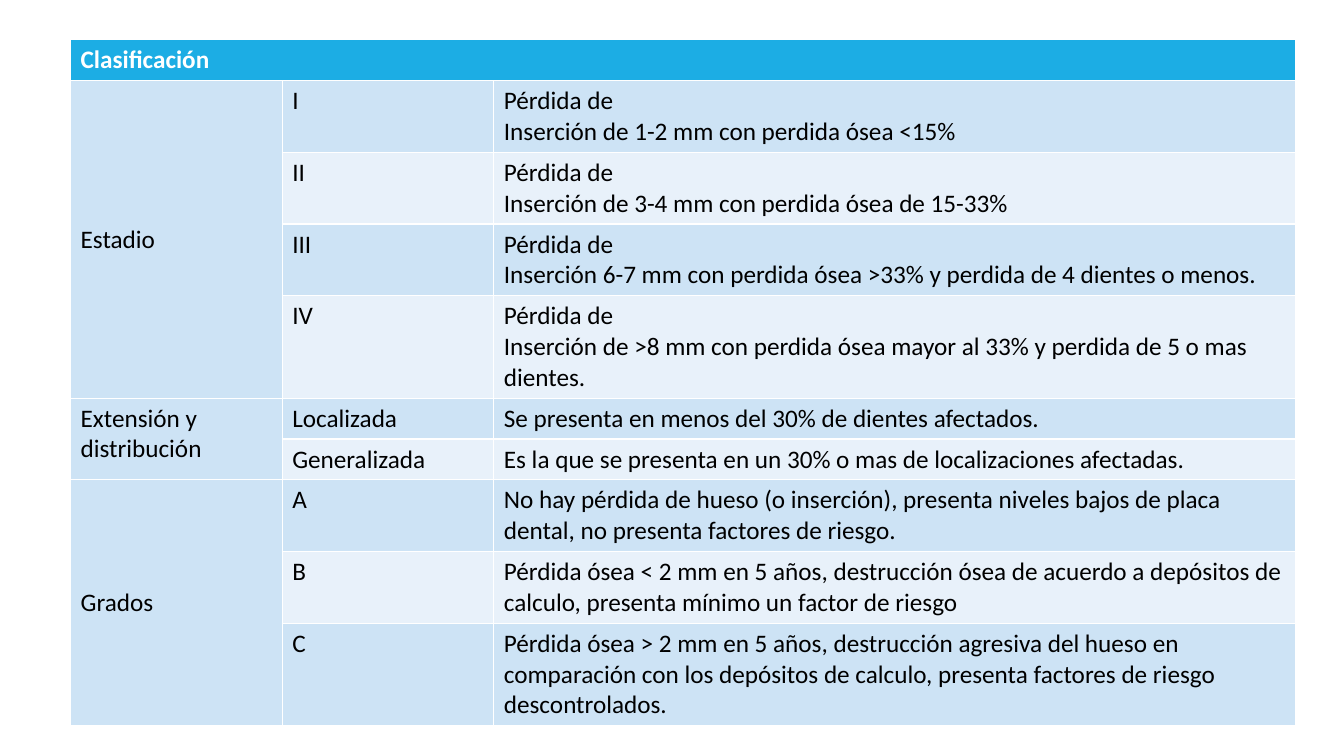
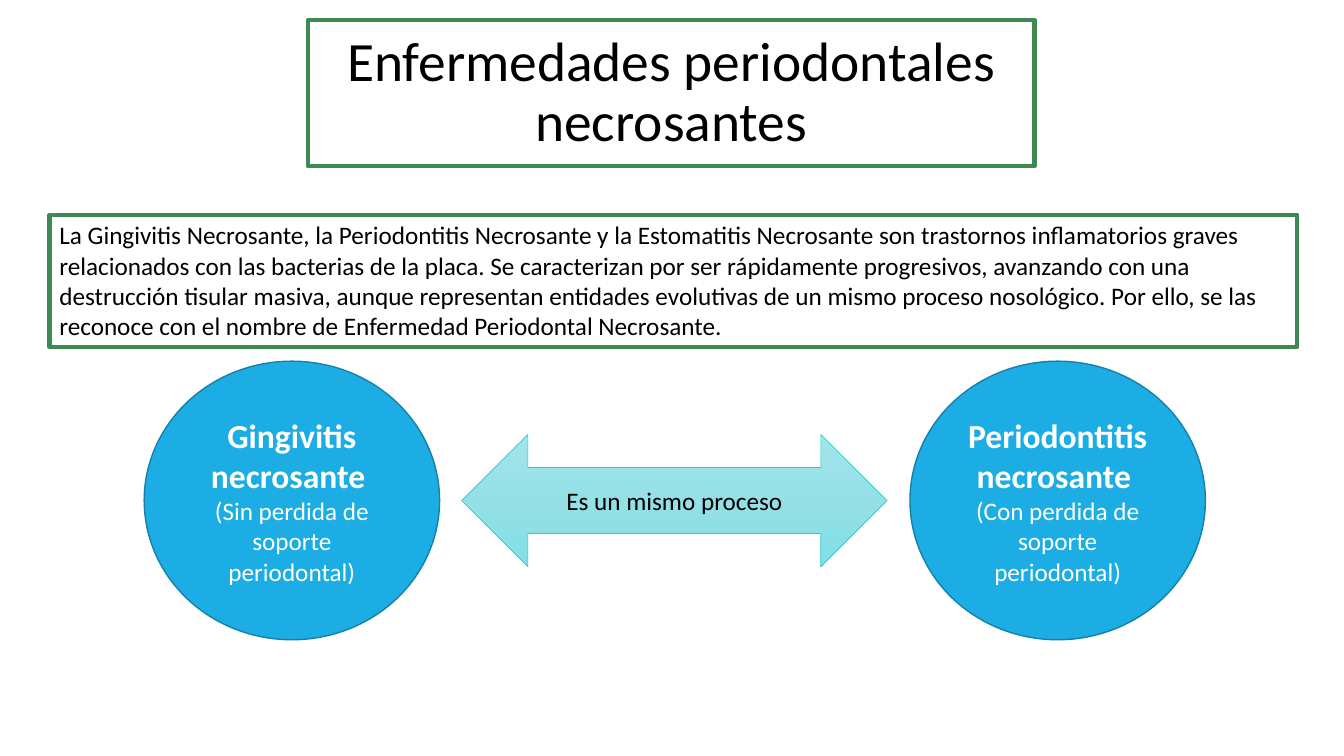
from copy import deepcopy

from pptx import Presentation
from pptx import util as u
from pptx.dml.color import RGBColor
from pptx.enum import shapes, text
from pptx.oxml.ns import qn

FONT = "Calibri"
WHITE, BLACK, BLUE, GREEN = "FFFFFF", "000000", "1CADE4", "3E8853"
BANDS = ("CDE3F5", "E8F1FA")
LEFT, CENTER = text.PP_ALIGN.LEFT, text.PP_ALIGN.CENTER
TOP, MIDDLE = text.MSO_ANCHOR.TOP, text.MSO_ANCHOR.MIDDLE
SHAPE = shapes.MSO_SHAPE


def rgb(color):
    return RGBColor.from_string(color)


class Deck:
    def __init__(self, width, height):
        self.prs = Presentation()
        self.prs.slide_width, self.prs.slide_height = u.Pt(width), u.Pt(height)
        self.s = None

    def slide(self, layout):
        self.s = self.prs.slides.add_slide(self.prs.slide_layouts[layout])

    def set_text(self, tf, paragraphs, align=LEFT, spacing=None):
        """Fill a frame from (text, size, color, bold) tuples."""
        tf.word_wrap = True
        for i, (words, size, color, bold) in enumerate(paragraphs):
            p = tf.add_paragraph() if i else tf.paragraphs[0]
            p.text, p.alignment, p.line_spacing = words, align, spacing
            style = {"name": FONT, "size": u.Pt(size), "bold": bold}
            for r in p.runs:
                for key, value in style.items():
                    setattr(r.font, key, value)
                r.font.color.rgb = rgb(color)

    def place(self, sp, box):
        for key, value in zip(("left", "top", "width", "height"), box):
            setattr(sp, key, u.Pt(value))

    def paint(self, sp, fill, line, weight):
        """Give a shape a plain fill, or a vertical gradient if fill is a list."""
        sp.shadow.inherit = False
        sp.line.color.rgb, sp.line.width = rgb(line), u.Pt(weight)
        if isinstance(fill, str):
            sp.fill.solid()
            sp.fill.fore_color.rgb = rgb(fill)
            return
        sp.fill.gradient()
        sp.fill.gradient_angle = 270
        stops = sp._element.spPr.find(".//" + qn("a:gsLst"))
        while len(stops) < len(fill):
            stops.append(deepcopy(stops[0]))
        for i, (stop, color) in enumerate(zip(sp.fill.gradient_stops, fill)):
            stop.position = i / (len(fill) - 1)
            stop.color.rgb = rgb(color)

    def title(self, box, words):
        sp = self.s.shapes.title
        self.place(sp, box)
        self.paint(sp, WHITE, GREEN, 3)
        sp.text_frame.auto_size = text.MSO_AUTO_SIZE.NONE
        sp.text_frame.vertical_anchor = MIDDLE
        self.set_text(sp.text_frame, [(words, 39.6, BLACK, False)], CENTER, 0.9)

    def shape(self, kind, box, paragraphs, fill, line, weight,
              align=CENTER, anchor=MIDDLE):
        sp = self.s.shapes.add_shape(kind, *map(u.Pt, box))
        self.paint(sp, fill, line, weight)
        sp.text_frame.vertical_anchor = anchor
        self.set_text(sp.text_frame, paragraphs, align)

    def cell(self, cell, words, fill, color=BLACK, bold=False, anchor=TOP):
        cell.fill.solid()
        cell.fill.fore_color.rgb = rgb(fill)
        cell.vertical_anchor = anchor
        self.set_text(cell.text_frame,
                      [(line, 18, color, bold) for line in words.split("\n")])

    def grouped_table(self, left, top, widths, header, groups):
        """Draw groups of (name, anchor, rows); a row is (label, text, lines)."""
        count = 1 + sum(len(rows) for _, _, rows in groups)
        table = self.s.shapes.add_table(
            count, len(widths), u.Pt(left), u.Pt(top),
            u.Pt(sum(widths)), u.Pt(29.2 * count)).table
        table.horz_banding = False
        for column, width in zip(table.columns, widths):
            column.width = u.Pt(width)
        table.rows[0].height = u.Pt(29.2)
        for i in range(len(widths)):
            self.cell(table.cell(0, i), "" if i else header, BLUE, WHITE, True)
        table.cell(0, 0).merge(table.cell(0, len(widths) - 1))
        n = 1
        for name, anchor, rows in groups:
            first = n
            for label, words, lines in rows:
                table.rows[n].height = u.Pt(7.2 + 22 * lines)
                band = BANDS[(n - 1) % 2]
                self.cell(table.cell(n, 0), name if n == first else "",
                          BANDS[0], anchor=anchor)
                self.cell(table.cell(n, 1), label, band)
                self.cell(table.cell(n, 2), words, band)
                n += 1
            table.cell(first, 0).merge(table.cell(n - 1, 0))


GROUPS = [
    ("Estadio", MIDDLE, [
        ("I", "Pérdida de\nInserción de 1-2 mm con perdida ósea <15%", 2),
        ("II", "Pérdida de\nInserción de 3-4 mm con perdida ósea de 15-33%", 2),
        ("III", "Pérdida de\nInserción 6-7 mm con perdida ósea >33% y perdida "
                "de 4 dientes o menos.", 2),
        ("IV", "Pérdida de\nInserción de >8 mm con perdida ósea mayor al 33% "
               "y perdida de 5 o mas dientes.", 3)]),
    ("Extensión y distribución", TOP, [
        ("Localizada", "Se presenta en menos del 30% de dientes afectados.", 1),
        ("Generalizada", "Es la que se presenta en un 30% o mas de "
                         "localizaciones afectadas.", 1)]),
    ("Grados", MIDDLE, [
        ("A", "No hay pérdida de hueso (o inserción), presenta niveles bajos "
              "de placa dental, no presenta factores de riesgo.", 2),
        ("B", "Pérdida ósea < 2 mm en 5 años, destrucción ósea de acuerdo a "
              "depósitos de calculo, presenta mínimo un factor de riesgo", 2),
        ("C", "Pérdida ósea > 2 mm en 5 años, destrucción agresiva del hueso "
              "en comparación con los depósitos de calculo, presenta factores "
              "de riesgo descontrolados.", 3)]),
]

DEFINITION = (
    "La Gingivitis Necrosante, la Periodontitis Necrosante y la Estomatitis "
    "Necrosante son trastornos inflamatorios graves relacionados con las "
    "bacterias de la placa. Se caracterizan por ser rápidamente progresivos, "
    "avanzando con una destrucción tisular masiva, aunque representan "
    "entidades evolutivas de un mismo proceso nosológico. Por ello, se las "
    "reconoce con el nombre de Enfermedad Periodontal Necrosante.")

DISEASES = [
    (103, "Gingivitis necrosante ", "(Sin perdida de soporte periodontal)"),
    (650, "Periodontitis necrosante ", "(Con perdida de soporte periodontal)"),
]


def main():
    deck = Deck(960, 540)

    deck.slide(6)
    deck.grouped_table(50.4, 28.4, (151.2, 151.2, 572.8), "Clasificación", GROUPS)

    deck.slide(5)
    deck.title((220, 14.4, 519, 104.4),
               "Enfermedades periodontales\nnecrosantes")
    deck.shape(SHAPE.RECTANGLE, (35.3, 153.4, 891.4, 94.5),
               [(DEFINITION, 18, BLACK, False)], WHITE, GREEN, 3, LEFT, TOP)
    for left, name, detail in DISEASES:
        deck.shape(SHAPE.OVAL, (left, 258, 211, 199),
                   [(name, 24, WHITE, True), (detail, 18, WHITE, False)],
                   BLUE, "1580A9", 1)
    deck.shape(SHAPE.LEFT_RIGHT_ARROW, (329.8, 310.3, 303.8, 94.5),
               [("Es un mismo proceso", 18, BLACK, False)],
               ["A2E5EB", "94E0E6", "7FE0E7"], "27CED7", 0.5)

    deck.prs.save("out.pptx")


if __name__ == "__main__":
    main()
